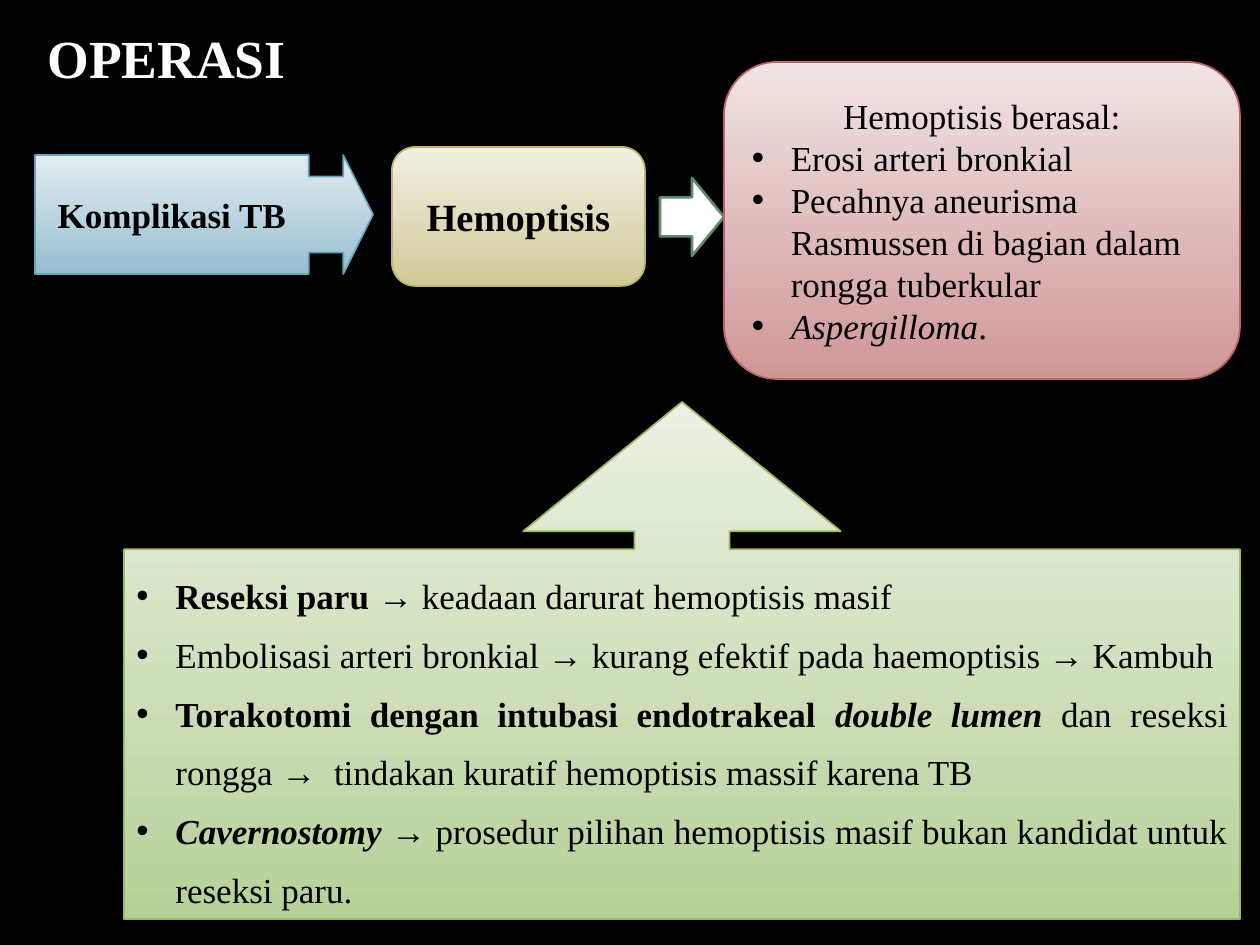
from dataclasses import dataclass
from typing import NamedTuple

from lxml.etree import SubElement
from pptx import Presentation
from pptx.dml.color import RGBColor
from pptx.enum.shapes import MSO_SHAPE
from pptx.enum.text import MSO_ANCHOR, PP_ALIGN
from pptx.oxml.ns import qn
from pptx.util import Emu, Pt

EMU_PER_PX = 914400 / 126


def px(length: int) -> Emu:
    return Emu(round(length * EMU_PER_PX))


@dataclass(frozen=True)
class Theme:
    font: str = "Times New Roman"
    background: str = "000000"
    ink: str = "000000"
    title_ink: str = "FFFFFF"
    title_size: float = 30.6
    heading_size: float = 22
    body_size: float = 20
    blue: tuple = ("E4EDF1", "97BED0")
    blue_line: str = "64A4BD"
    sand: tuple = ("F1F0E4", "D0CA97")
    sand_line: str = "BDB564"
    white: tuple = ("FFFFFF",)
    white_line: str = "5F896C"
    rose: tuple = ("F1E4E4", "D09798")
    rose_line: str = "BD6466"
    green: tuple = ("EBF1E4", "B7D098")
    green_line: str = "9ABC65"


THEME = Theme()


class Span(NamedTuple):
    text: str
    bold: bool = False
    italic: bool = False


class Line(NamedTuple):
    spans: tuple
    align: PP_ALIGN = PP_ALIGN.CENTER
    bullet: bool = False
    spacing: float = 1.0


class Box(NamedTuple):
    left: int
    top: int
    width: int
    height: int


@dataclass(frozen=True)
class Panel:
    preset: MSO_SHAPE
    box: Box
    fill: tuple
    outline: str
    lines: tuple = ()
    size: float = THEME.body_size
    outline_width: float = 1
    adjustments: tuple = ()


def cause(*spans: Span) -> Line:
    return Line(spans, PP_ALIGN.LEFT, bullet=True)


def treatment(*spans: Span) -> Line:
    return Line(spans, PP_ALIGN.JUSTIFY, bullet=True, spacing=1.4)


TITLE_BOX = Box(35, 26, 556, 71)
TITLE = Line((Span("OPERASI", bold=True),), PP_ALIGN.JUSTIFY, spacing=0.9)

PANELS = (
    Panel(MSO_SHAPE.RIGHT_ARROW_CALLOUT, Box(35, 155, 338, 119),
          THEME.blue, THEME.blue_line,
          (Line((Span("Komplikasi TB", bold=True),)),),
          adjustments=(0.639, 0.5, 0.25, 0.81)),
    Panel(MSO_SHAPE.ROUNDED_RECTANGLE, Box(392, 147, 253, 139),
          THEME.sand, THEME.sand_line,
          (Line((Span("Hemoptisis", bold=True),)),), THEME.heading_size),
    Panel(MSO_SHAPE.RIGHT_ARROW, Box(660, 178, 64, 78),
          THEME.white, THEME.white_line, outline_width=1.5),
    Panel(MSO_SHAPE.ROUNDED_RECTANGLE, Box(724, 62, 516, 317),
          THEME.rose, THEME.rose_line, (
              Line((Span("Hemoptisis berasal:"),)),
              cause(Span("Erosi arteri bronkial")),
              cause(Span("Pecahnya aneurisma Rasmussen di bagian dalam "
                         "rongga tuberkular")),
              cause(Span("Aspergilloma", italic=True), Span(".")),
          )),
    Panel(MSO_SHAPE.UP_ARROW_CALLOUT, Box(124, 402, 1116, 517),
          THEME.green, THEME.green_line, (
              treatment(Span("Reseksi paru ", bold=True),
                        Span("→ keadaan darurat hemoptisis masif ")),
              treatment(Span("Embolisasi arteri bronkial → kurang efektif "
                             "pada haemoptisis → Kambuh")),
              treatment(Span("Torakotomi dengan intubasi endotrakeal ", bold=True),
                        Span("double lumen ", bold=True, italic=True),
                        Span("dan reseksi rongga →  tindakan kuratif "
                             "hemoptisis massif karena TB")),
              treatment(Span("Cavernostomy ", bold=True, italic=True),
                        Span("→ prosedur pilihan hemoptisis masif bukan "
                             "kandidat untuk reseksi paru.")),
          ), adjustments=(0.184, 0.307, 0.25, 0.715)),
)


def add_bullet(paragraph) -> None:
    properties = paragraph._p.get_or_add_pPr()
    indent = px(39)
    properties.set("marL", str(indent))
    properties.set("indent", str(-indent))
    SubElement(properties, qn("a:buFont")).set("typeface", "Arial")
    SubElement(properties, qn("a:buChar")).set("char", "•")


def write_lines(frame, lines: tuple, size: float, ink: str) -> None:
    frame.word_wrap = True
    frame.vertical_anchor = MSO_ANCHOR.MIDDLE
    for index, line in enumerate(lines):
        paragraph = frame.add_paragraph() if index else frame.paragraphs[0]
        if line.bullet:
            add_bullet(paragraph)
        paragraph.alignment = line.align
        paragraph.line_spacing = line.spacing
        for span in line.spans:
            run = paragraph.add_run()
            run.text = span.text
            run.font.name = THEME.font
            run.font.size = Pt(size)
            run.font.bold = span.bold
            run.font.italic = span.italic
            run.font.color.rgb = RGBColor.from_string(ink)


def paint(fill, colours: tuple) -> None:
    if len(colours) == 1:
        fill.solid()
        fill.fore_color.rgb = RGBColor.from_string(colours[0])
        return
    fill.gradient()
    fill.gradient_angle = 270
    for stop, colour in zip(fill.gradient_stops, colours):
        stop.color.rgb = RGBColor.from_string(colour)


def draw_panel(slide, panel: Panel) -> None:
    shape = slide.shapes.add_shape(panel.preset, *map(px, panel.box))
    shape.shadow.inherit = False
    for index, value in enumerate(panel.adjustments):
        shape.adjustments[index] = value
    paint(shape.fill, panel.fill)
    shape.line.color.rgb = RGBColor.from_string(panel.outline)
    shape.line.width = Pt(panel.outline_width)
    write_lines(shape.text_frame, panel.lines, panel.size, THEME.ink)


def main() -> None:
    deck = Presentation()
    deck.slide_width, deck.slide_height = px(1260), px(945)
    slide = deck.slides.add_slide(deck.slide_layouts[6])
    paint(slide.background.fill, (THEME.background,))
    title = slide.shapes.add_textbox(*map(px, TITLE_BOX))
    write_lines(title.text_frame, (TITLE,), THEME.title_size, THEME.title_ink)
    for panel in PANELS:
        draw_panel(slide, panel)
    deck.save("out.pptx")


if __name__ == "__main__":
    main()
